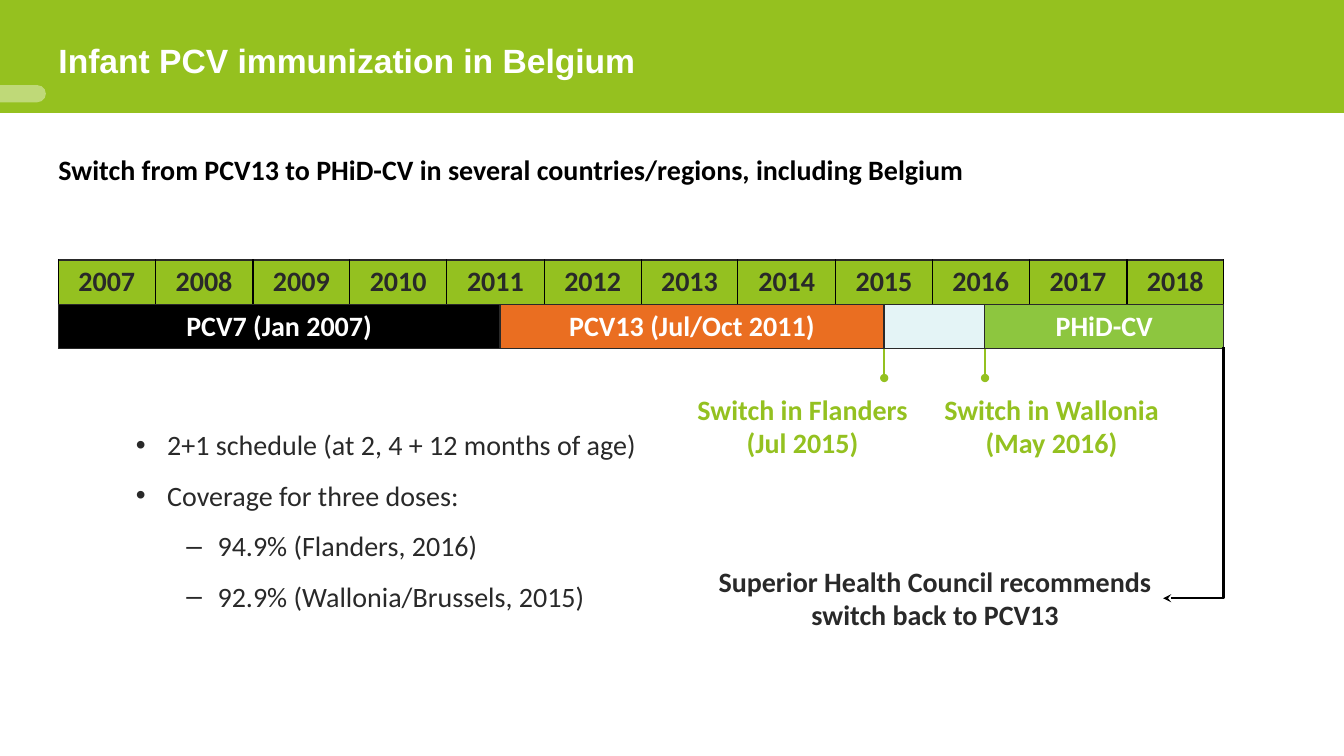
from lxml.etree import SubElement
from pptx import Presentation
from pptx.dml.color import RGBColor
from pptx.enum.shapes import MSO_CONNECTOR as LINE, MSO_SHAPE as SHAPE
from pptx.enum.text import MSO_ANCHOR as ANCHOR, PP_ALIGN as ALIGN
from pptx.oxml.ns import qn
from pptx.util import Emu, Pt

PX = 9144  # 100 px to the inch
COLORS = {
    "banner": "95C11F", "green": "94C120", "white": "FFFFFF", "black": "000000",
    "ink": "292929", "orange": "EA6E21", "pale": "E4F4F6", "leaf": "8DC63F",
}

LEFT, TOP, WIDTH, ROW = 58, 258, 1156, 44
YEARS = range(2007, 2019)
YEAR_EDGES = [LEFT + round(WIDTH * i / len(YEARS)) for i in range(len(YEARS) + 1)]
PCV13_START, FLANDERS, WALLONIA = 496, 877, 977
# text, left edge, fill
VACCINES = [
    ("PCV7 (Jan 2007)", LEFT, "black"),
    ("PCV13 (Jul/Oct 2011)", PCV13_START, "orange"),
    ("", FLANDERS, "pale"),
    ("PHiD-CV", WALLONIA, "leaf"),
]
SWITCHES = [
    (FLANDERS, (675, 384, 242, 77), ["Switch in Flanders", "(Jul 2015)"]),
    (WALLONIA, (926, 384, 234, 77), ["Switch in Wallonia", "(May 2016)"]),
]
# text, bullet, indent
SCHEDULE = [
    ("2+1 schedule (at 2, 4 + 12 months of age)", "•", 31),
    ("Coverage for three doses:", "•", 31),
    ("94.9% (Flanders, 2016)", "–", 81),
    ("92.9% (Wallonia/Brussels, 2015)", "–", 81),
]


def px(*lengths):
    return [Emu(length * PX) for length in lengths]


def rgb(name):
    return RGBColor.from_string(COLORS[name])


def set_all(target, values):
    for name, value in values.items():
        setattr(target, name, value)


def write(para, text, color, bold=True, size=20, font="Calibri"):
    span = para.add_run()
    span.text = text
    set_all(span.font, {"name": font, "size": Pt(size), "bold": bold})
    span.font.color.rgb = rgb(color)


def add_bullet(para, mark, indent):
    """Hang the mark 31 px to the left of the indented text."""
    props = para._p.get_or_add_pPr()
    props.set("marL", str(indent * PX))
    props.set("indent", str(-31 * PX))
    SubElement(SubElement(props, qn("a:buClr")), qn("a:srgbClr"), val=COLORS["ink"])
    SubElement(props, qn("a:buFont"), typeface="Arial")
    SubElement(props, qn("a:buChar"), char=mark)


def add_text(page, place, lines, color, align=ALIGN.LEFT, spacing=None,
             bullets=None, frame_format=None, **style):
    frame = page.shapes.add_textbox(*px(*place)).text_frame
    set_all(frame, {"word_wrap": True, **(frame_format or {})})
    for i, line in enumerate(lines):
        para = frame.add_paragraph() if i else frame.paragraphs[0]
        if bullets:
            add_bullet(para, *bullets[i])
        set_all(para, {"alignment": align, "line_spacing": spacing})
        write(para, line, color, **style)


def add_block(page, kind, place, color, opacity=None):
    block = page.shapes.add_shape(kind, *px(*place))
    block.shadow.inherit = False
    block.fill.solid()
    block.fill.fore_color.rgb = rgb(color)
    block.line.fill.background()
    if opacity:
        fill = block._element.spPr.find(qn("a:solidFill"))
        SubElement(fill[0], qn("a:alpha"), val=str(opacity * 1000))
    return block


def add_line(page, kind, start, end, color, tail):
    line = page.shapes.add_connector(kind, *px(*start, *end))
    set_all(line.line, {"width": Pt(1.75)})
    line.line.color.rgb = rgb(color)
    props = line._element.spPr
    SubElement(props.find(qn("a:ln")), qn("a:tailEnd"), type=tail)
    SubElement(props, qn("a:effectLst"))
    return line


def add_corner_arrow(page, start, end):
    """Go down from start, then left to end: a quarter-turned two-leg elbow."""
    across, down = start[0] - end[0], end[1] - start[1]
    left = (start[0] + end[0] - down) // 2
    top = (start[1] + end[1] - across) // 2
    arrow = add_line(page, LINE.ELBOW, (left, top), (left + down, top + across),
                     "black", "stealth")
    props = arrow._element.spPr
    props.find(qn("a:xfrm")).set("rot", "5400000")
    props.find(qn("a:prstGeom")).set("prst", "bentConnector2")


def fill_cell(cell, text, fill, color, side_color):
    cell.vertical_anchor = ANCHOR.TOP
    props = cell._tc.get_or_add_tcPr()
    for side in ("lnL", "lnR", "lnT", "lnB"):
        border = SubElement(props, qn(f"a:{side}"), w=str(Pt(1)))
        name = side_color if side in ("lnL", "lnR") else "ink"
        SubElement(SubElement(border, qn("a:solidFill")), qn("a:srgbClr"), val=COLORS[name])
    cell.fill.solid()
    cell.fill.fore_color.rgb = rgb(fill)
    para = cell.text_frame.paragraphs[0]
    para.alignment = ALIGN.CENTER
    if text:
        write(para, text, color)


def add_timeline(page):
    """Give each year or vaccine the columns between its own two edges."""
    vaccine_edges = [left for _, left, _ in VACCINES] + [LEFT + WIDTH]
    edges = sorted({*YEAR_EDGES, *vaccine_edges})
    table = page.shapes.add_table(2, len(edges) - 1, *px(LEFT, TOP, WIDTH, 2 * ROW)).table
    set_all(table, {"first_row": False, "horz_banding": False})
    for column, left, right in zip(table.columns, edges, edges[1:]):
        column.width = Emu((right - left) * PX)

    years = [(str(year), "green", "ink", "black") for year in YEARS]
    vaccines = [(text, fill, "white", "ink") for text, _, fill in VACCINES]
    for row, (items, bounds) in enumerate([(years, YEAR_EDGES), (vaccines, vaccine_edges)]):
        for item, left, right in zip(items, bounds, bounds[1:]):
            first, last = edges.index(left), edges.index(right) - 1
            cell = table.cell(row, first)
            if last > first:
                cell.merge(table.cell(row, last))
            fill_cell(cell, *item)


def main():
    deck = Presentation()
    deck.slide_width, deck.slide_height = px(1333, 750)
    page = deck.slides.add_slide(deck.slide_layouts[6])
    flush = dict.fromkeys(("margin_left", "margin_top", "margin_right", "margin_bottom"), 0)

    add_block(page, SHAPE.RECTANGLE, (0, 0, 1333, 112), "banner")
    tab = add_block(page, SHAPE.ROUND_2_SAME_RECTANGLE, (14, 70, 17, 46), "white", opacity=40)
    tab.rotation = 90
    tab.adjustments[0] = 0.5
    add_text(page, (58, 40, 1081, 40), ["Infant PCV immunization in Belgium"], "white",
             spacing=0.85, frame_format={**flush, "vertical_anchor": ANCHOR.BOTTOM},
             size=24, font="Arial")
    add_text(page, (58, 155, 1218, 535),
             ["Switch from PCV13 to PHiD-CV in several countries/regions, including Belgium"],
             "black", spacing=0.9, frame_format=flush)

    for x, place, lines in SWITCHES:
        add_line(page, LINE.STRAIGHT, (x, 326), (x, 375), "green", "oval")
        add_text(page, place, lines, "green", align=ALIGN.CENTER)
    add_timeline(page)

    add_text(page, (701, 555, 453, 77),
             ["Superior Health Council recommends", "switch back to PCV13"],
             "ink", align=ALIGN.CENTER)
    add_corner_arrow(page, (LEFT + WIDTH, 345), (1154, 594))
    add_text(page, (125, 403, 533, 212), [text for text, _, _ in SCHEDULE], "ink",
             spacing=1.5, bullets=[(mark, indent) for _, mark, indent in SCHEDULE], bold=False)

    deck.save("out.pptx")


if __name__ == "__main__":
    main()
